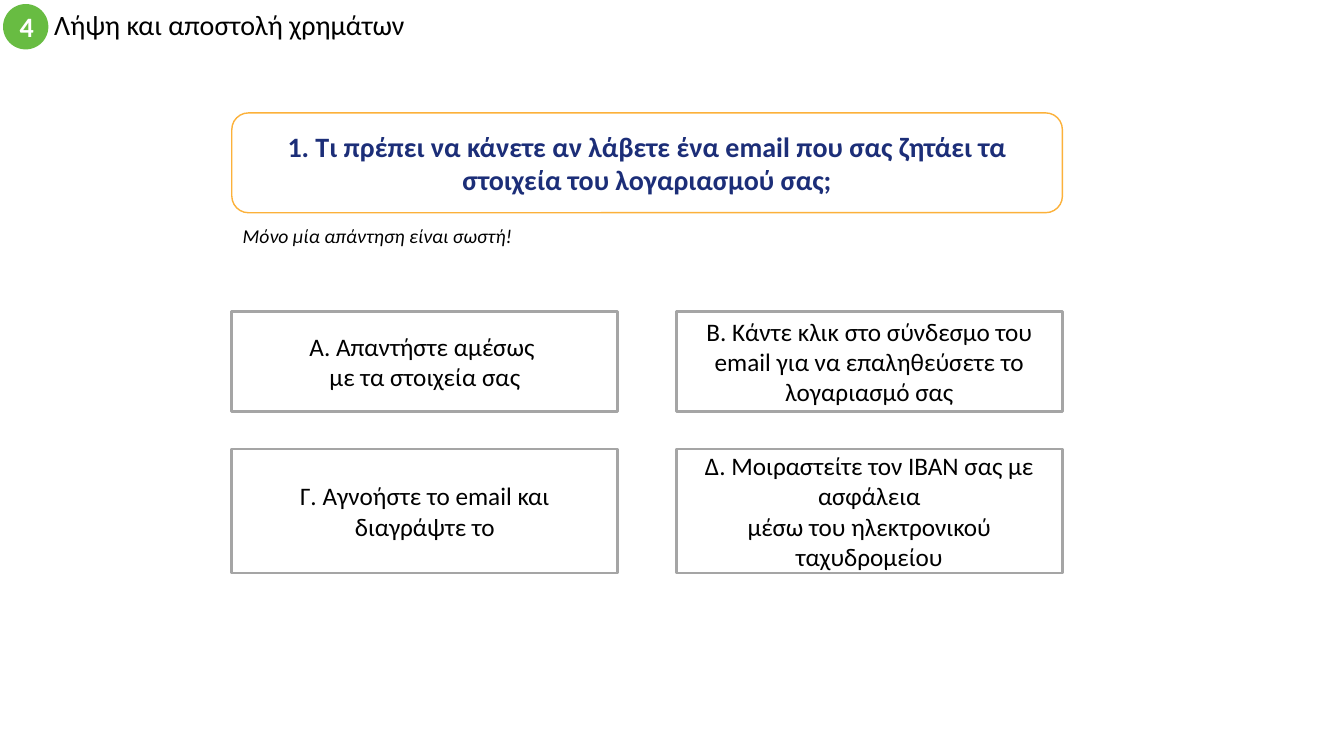
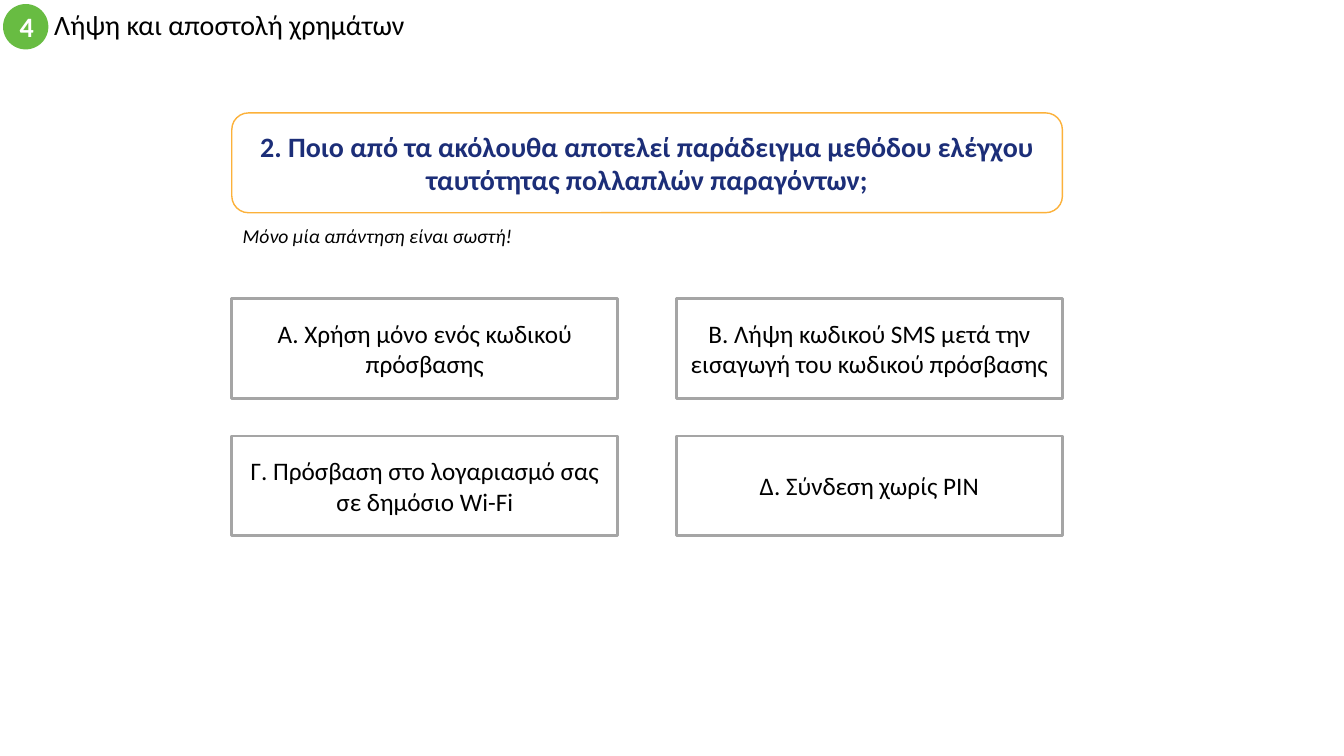
"""Build two multiple-choice quiz slides on receiving and sending money."""
import dataclasses
import itertools
import typing

import pptx
import pptx.dml.color
import pptx.enum.shapes
import pptx.enum.text
import pptx.util

Pt = pptx.util.Pt
SHAPE = pptx.enum.shapes.MSO_SHAPE
ALIGN = pptx.enum.text.PP_ALIGN
ANCHOR = pptx.enum.text.MSO_ANCHOR

GREEN, ORANGE, NAVY, GREY = "68BC42", "FCB13A", "1C2E78", "A5A5A5"
WHITE, BLACK = "FFFFFF", "000000"

QUIZ_LEFT, QUIZ_WIDTH = 165.6, 593.28
ANSWER_WIDTH, ROW_GAP = 275.76, 27
BOX_HEIGHT = 71.28


class Area(typing.NamedTuple):
    left: float
    top: float
    width: float
    height: float


@dataclasses.dataclass(frozen=True)
class Style:
    size: float
    color: str = BLACK
    bold: bool = False
    italic: bool = False
    align: typing.Any = ALIGN.CENTER
    anchor: typing.Any = ANCHOR.MIDDLE
    spacing: float = 1.0


@dataclasses.dataclass(frozen=True)
class Frame:
    outline: typing.Any
    fill: str = WHITE
    line: typing.Optional[str] = None
    line_width: float = 0


@dataclasses.dataclass(frozen=True)
class Question:
    text: str
    hint_width: float
    answers_top: float
    row_heights: tuple[float, ...]
    answers: tuple[str, ...]


BADGE = Frame(SHAPE.OVAL, GREEN)
QUESTION_FRAME = Frame(SHAPE.ROUNDED_RECTANGLE, line=ORANGE, line_width=1)
ANSWER_FRAME = Frame(SHAPE.RECTANGLE, line=GREY, line_width=2)

BADGE_STYLE = Style(20, WHITE, bold=True)
TITLE_STYLE = Style(20, align=ALIGN.LEFT, spacing=0.9)
QUESTION_STYLE = Style(20, NAVY, bold=True)
HINT_STYLE = Style(14, italic=True, align=ALIGN.LEFT, anchor=ANCHOR.TOP)
ANSWER_STYLE = Style(18)

QUESTIONS = (
    Question(
        "1. Τι πρέπει να κάνετε αν λάβετε ένα email που σας ζητάει τα στοιχεία του λογαριασμού σας;",
        316.8, 222.48, (BOX_HEIGHT, 88.56),
        (
            "A. Απαντήστε αμέσως \nμε τα στοιχεία σας",
            "B. Κάντε κλικ στο σύνδεσμο του email για να επαληθεύσετε το λογαριασμό σας",
            "Γ. Αγνοήστε το email και διαγράψτε το",
            "Δ. Μοιραστείτε τον IBAN σας με ασφάλεια\nμέσω του ηλεκτρονικού ταχυδρομείου",
        ),
    ),
    Question(
        "2. Ποιο από τα ακόλουθα αποτελεί παράδειγμα μεθόδου ελέγχου ταυτότητας πολλαπλών παραγόντων;",
        254.88, 213.12, (BOX_HEIGHT, BOX_HEIGHT),
        (
            "A. Χρήση μόνο ενός κωδικού πρόσβασης",
            "B. Λήψη κωδικού SMS μετά την εισαγωγή του κωδικού πρόσβασης",
            "Γ. Πρόσβαση στο λογαριασμό σας\nσε δημόσιο Wi-Fi",
            "Δ. Σύνδεση χωρίς PIN",
        ),
    ),
)


def rgb(value: str) -> pptx.dml.color.RGBColor:
    """Turn a hex string into a colour."""
    return pptx.dml.color.RGBColor.from_string(value)


def write(frame, text: str, style: Style) -> None:
    """Put one styled paragraph into a text frame."""
    frame.word_wrap = True
    frame.vertical_anchor = style.anchor
    paragraph = frame.paragraphs[0]
    paragraph.text = text
    paragraph.alignment = style.align
    paragraph.line_spacing = style.spacing
    formats = {"name": "Calibri", "size": Pt(style.size), "bold": style.bold, "italic": style.italic}
    for run in paragraph.runs:
        for attribute, value in formats.items():
            setattr(run.font, attribute, value)
        run.font.color.rgb = rgb(style.color)


def add_box(slide, area: Area, frame: Frame, text: str, style: Style) -> None:
    """Draw a filled shape with text."""
    box = slide.shapes.add_shape(frame.outline, *map(Pt, area))
    box.shadow.inherit = False
    box.fill.solid()
    box.fill.fore_color.rgb = rgb(frame.fill)
    if frame.line:
        box.line.color.rgb = rgb(frame.line)
        box.line.width = Pt(frame.line_width)
    else:
        box.line.fill.background()
    write(box.text_frame, text, style)


def add_label(slide, area: Area, text: str, style: Style):
    """Draw plain text and return its text frame."""
    label = slide.shapes.add_textbox(*map(Pt, area)).text_frame
    write(label, text, style)
    return label


def add_header(slide) -> None:
    """Draw the numbered badge and the section title."""
    add_box(slide, Area(2.16, 2.88, 32.4, 32.4), BADGE, "4", BADGE_STYLE)
    add_label(slide, Area(31.68, 2.88, 576, 32.4), "Λήψη και αποστολή χρημάτων", TITLE_STYLE)


def answer_areas(question: Question) -> typing.Iterator[Area]:
    """Yield the answer boxes row by row."""
    top = question.answers_top
    for height in question.row_heights:
        for left in (QUIZ_LEFT, QUIZ_LEFT + QUIZ_WIDTH - ANSWER_WIDTH):
            yield Area(left, top, ANSWER_WIDTH, height)
        top += height + ROW_GAP


def add_question(slide, question: Question) -> None:
    """Draw a question, its hint and its four answers."""
    add_box(slide, Area(QUIZ_LEFT, 80.64, QUIZ_WIDTH, BOX_HEIGHT),
            QUESTION_FRAME, question.text, QUESTION_STYLE)
    hint = add_label(slide, Area(166.32, 156.24, question.hint_width, 24.48),
                     "Μόνο μία απάντηση είναι σωστή!", HINT_STYLE)
    hint.auto_size = pptx.enum.text.MSO_AUTO_SIZE.SHAPE_TO_FIT_TEXT
    for area, answer in zip(answer_areas(question), question.answers):
        add_box(slide, area, ANSWER_FRAME, answer, ANSWER_STYLE)


def main() -> None:
    """Build and save the presentation."""
    deck = pptx.Presentation()
    deck.slide_width, deck.slide_height = Pt(960), Pt(540)
    blank = deck.slide_layouts[6]
    for question in QUESTIONS:
        slide = deck.slides.add_slide(blank)
        add_header(slide)
        add_question(slide, question)
    deck.save("out.pptx")


if __name__ == "__main__":
    main()
